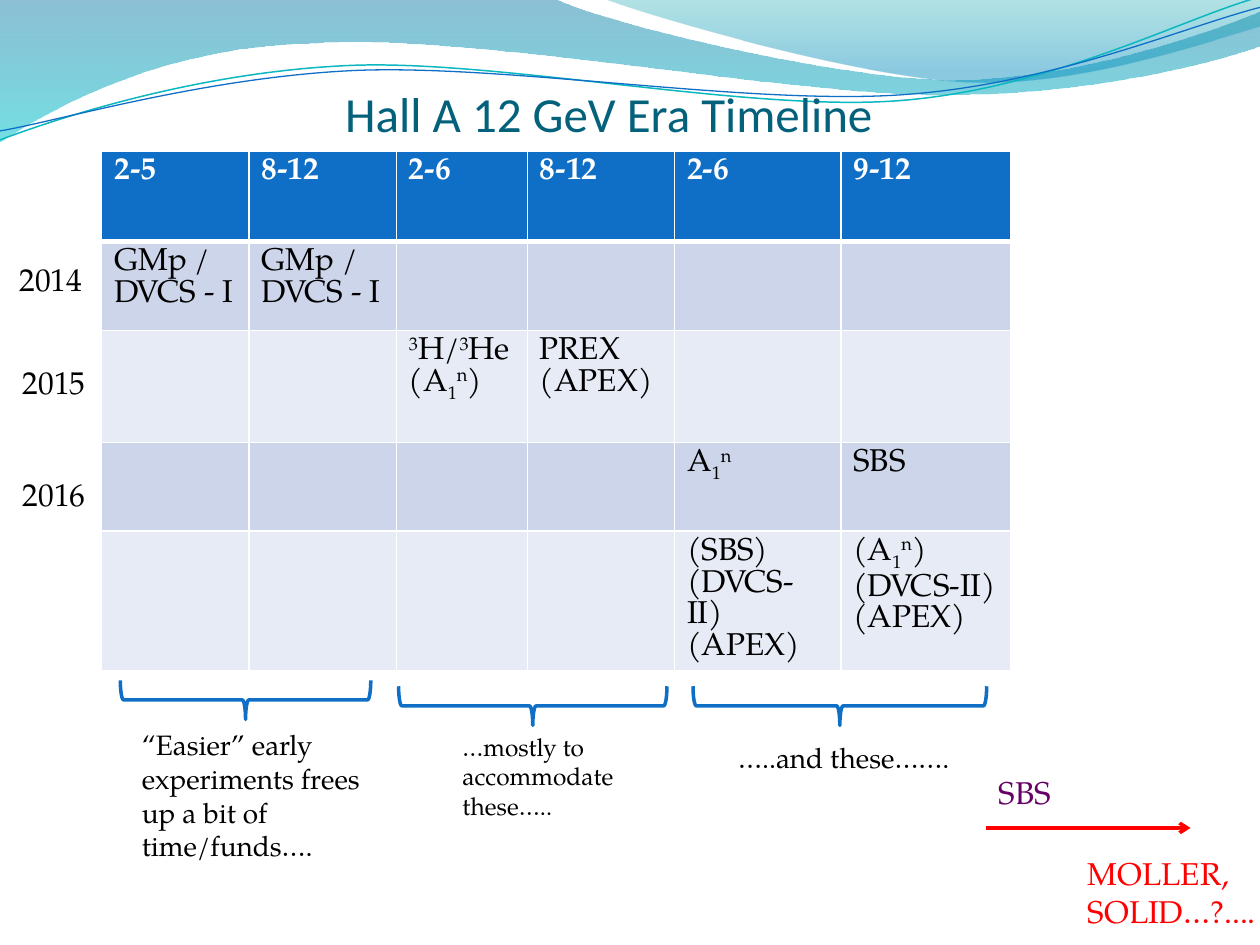
from dataclasses import dataclass
from itertools import product
from math import cos, radians, sin
from typing import Any, NamedTuple

from lxml.etree import SubElement
from pptx import Presentation
from pptx.dml.color import RGBColor as Rgb
from pptx.enum.shapes import MSO_CONNECTOR as Connector, MSO_SHAPE as Preset
from pptx.enum.text import MSO_ANCHOR as Anchor, PP_ALIGN as Align
from pptx.oxml.ns import qn
from pptx.util import Cm, Pt


@dataclass(frozen=True)
class Theme:
    heading_font: str = "Calibri"
    body_font: str = "TeX Gyre Pagella"
    heading_size: float = 28
    body_size: float = 18
    note_size: float = 16
    small_size: float = 14
    heading: str = "04617B"
    black: str = "000000"
    white: str = "FFFFFF"
    blue: str = "0F6FC6"
    teal: str = "0AB8BF"
    red: str = "FF0000"
    purple: str = "660066"
    bands: tuple = ("CCD5EA", "E7EBF5")


THEME = Theme()


class Piece(NamedTuple):
    text: str
    baseline: int = 0


class Stop(NamedTuple):
    position: float
    color: str
    opacity: int


class Label(NamedTuple):
    text: str
    box: tuple
    size: float = THEME.body_size
    color: str = THEME.black


class Brace(NamedTuple):
    center_x: float
    center_y: float
    span: float


@dataclass(frozen=True)
class Wave:
    start: tuple
    segments: tuple
    stops: tuple = ()
    line_color: str = ""
    line_width: float = 0
    tilt: float = 0
    pivot: tuple = (0, 0)


SUPER_3 = Piece("3", 30000)
A1N = (Piece("A"), Piece("1", -25000), Piece("n", 30000))
A1N_BRACKETED = (Piece("(A"), *A1N[1:], Piece(")"))
GMP, SBS, SBS_BRACKETED = (Piece("GMp / DVCS - I"),), (Piece("SBS"),), (Piece("(SBS)"),)
PREX, APEX, DVCS = (Piece("PREX"),), (Piece("(APEX)"),), (Piece("(DVCS-II)"),)
HELIUM = (SUPER_3, Piece("H/"), SUPER_3, Piece("He"))

MONTHS = ("2-5", "8-12", "2-6", "8-12", "2-6", "9-12")
EXPERIMENTS = {
    (1, 0): [GMP], (1, 1): [GMP],
    (2, 2): [HELIUM, A1N_BRACKETED], (2, 3): [PREX, APEX],
    (3, 4): [A1N], (3, 5): [SBS],
    (4, 4): [SBS_BRACKETED, DVCS, APEX], (4, 5): [A1N_BRACKETED, DVCS, APEX],
}
COLUMN_WIDTHS = (2.97, 2.97, 2.64, 2.97, 3.35, 3.43)
ROW_HEIGHTS = (1.83, 1.79, 2.26, 1.79, 2.79)

WAVES = (
    Wave((-0.01, 0), (
        ((11.18, -0.03),), ((12.09, 0.43), (16.87, 1.6), (19.25, 1.6)),
        ((21.67, 1.6), (24.33, 0.66), (25.4, 0.23)), ((25.43, 0.91),),
        ((24.97, 1.12), (22.1, 1.93), (18.95, 1.91)),
        ((15.8, 1.91), (9.7, 0.71), (6.53, 0.86)),
        ((3.28, 0.91), (1.17, 2.11), (-0.03, 2.87)),
    ), stops=(Stop(0, "0074A1", 45), Stop(1, "00C6CF", 55))),
    Wave((12.17, -0.03), (
        ((12.93, 0.28), (17.32, 1.57), (19.53, 1.65)),
        ((21.74, 1.75), (24.41, 0.81), (25.4, 0.53)), ((25.4, 0),),
    ), stops=(Stop(0, "00A1A9", 30), Stop(0.8, "008BBF", 45))),
    Wave((0, 2.82), (
        ((1.22, 2.36), (4.01, 1.45), (7.04, 1.32)),
        ((10.03, 1.19), (15.06, 2.26), (18.11, 2.03)),
        ((21.16, 1.8), (23.83, 0.38), (25.35, -0.05)),
    ), line_color=THEME.teal, line_width=0.85, tilt=-2.7, pivot=(12.67, 1.46)),
    Wave((0, 2.64), (
        ((1.19, 2.44), (4.17, 1.55), (7.19, 1.42)),
        ((10.24, 1.3), (15.16, 2.13), (18.21, 1.91)),
        ((21.23, 1.7), (23.9, 0.53), (25.4, 0.15)),
    ), line_color=THEME.blue, line_width=0.75, tilt=-2.7, pivot=(12.69, 1.5)),
)

BRACES = (Brace(4.95, 14.11, 5.05), Brace(10.74, 14.23, 5.41), Brace(16.93, 14.23, 5.92))
LABELS = (
    Label("“Easier” early experiments frees up a bit of time/funds….",
          (2.61, 14.55, 5.26, 3.76), THEME.note_size),
    Label("…mostly to accommodate these…..", (9.07, 14.63, 3.71, 2.06), THEME.small_size),
    Label("…..and these…….", (14.63, 14.81, 5.26, 1.7), THEME.note_size),
    Label("MOLLER, SOLID…?....", (21.68, 17.09, 4.06, 1.8), color=THEME.red),
    Label("2014", (0.14, 5.11, 2.03, 1.02)),
    Label("2015", (0.21, 7.19, 2.03, 1.02)),
    Label("2016", (0.21, 9.45, 2.03, 1.02)),
    Label("SBS", (19.88, 15.46, 1.8, 1.02), color=THEME.purple),
)


def apply(target: Any, **values: Any) -> None:
    for attribute, value in values.items():
        setattr(target, attribute, value)


def style_font(font: Any, size: float, color: str, name: str = THEME.body_font,
               bold: bool = False) -> None:
    apply(font, size=Pt(size), name=name, bold=bold)
    font.color.rgb = Rgb.from_string(color)


def style_line(line: Any, color: str, width: float) -> None:
    line.color.rgb = Rgb.from_string(color)
    line.width = Pt(width)


def level(point: tuple, wave: Wave) -> tuple:
    angle = radians(-wave.tilt)
    dx, dy = point[0] - wave.pivot[0], point[1] - wave.pivot[1]
    return (Cm(wave.pivot[0] + dx * cos(angle) - dy * sin(angle)),
            Cm(wave.pivot[1] + dx * sin(angle) + dy * cos(angle)))


def bend(ribbon: Any, segments: tuple) -> None:
    steps = iter(list(ribbon._element.spPr.iter(qn("a:lnTo"))))
    for segment in segments:
        first, *others = [next(steps) for _ in segment]
        if others:
            first.tag = qn("a:cubicBezTo")
        for step in others:
            first.append(step[0])
            step.getparent().remove(step)


def draw_wave(shapes: Any, wave: Wave) -> None:
    builder = shapes.build_freeform(*level(wave.start, wave))
    corners = [level(point, wave) for segment in wave.segments for point in segment]
    builder.add_line_segments(corners, close=bool(wave.stops))
    ribbon = builder.convert_to_shape()
    bend(ribbon, wave.segments)
    ribbon.rotation = wave.tilt
    ribbon.shadow.inherit = False
    if not wave.stops:
        ribbon.fill.background()
        style_line(ribbon.line, wave.line_color, wave.line_width)
        return
    ribbon.line.fill.background()
    ribbon.fill.gradient()
    ribbon.fill.gradient_angle = 270
    for target, stop in zip(ribbon.fill.gradient_stops, wave.stops):
        target.position = stop.position
        target.color.rgb = Rgb.from_string(stop.color)
    for color, stop in zip(ribbon._element.spPr.iter(qn("a:srgbClr")), wave.stops):
        SubElement(color, qn("a:alpha"), val=str(stop.opacity * 1000))


def draw_title(title: Any) -> None:
    title._element.getparent().append(title._element)
    apply(title, left=Cm(-0.43), top=Cm(-0.3), width=Cm(25.4), height=Cm(3.18))
    frame = title.text_frame
    apply(frame, text="Hall A 12 GeV Era Timeline", vertical_anchor=Anchor.BOTTOM,
          margin_left=0, margin_right=0, margin_bottom=0)
    frame.paragraphs[0].alignment = Align.CENTER
    style_font(frame.paragraphs[0].runs[0].font, THEME.heading_size, THEME.heading,
               THEME.heading_font)


def fill_cell(cell: Any, paragraphs: list, header: bool, fill: str) -> None:
    properties = cell._tc.get_or_add_tcPr()
    for side in "LRTB":
        width = Pt(3 if header and side == "B" else 1)
        border = SubElement(properties, qn(f"a:ln{side}"), w=str(width))
        SubElement(SubElement(border, qn("a:solidFill")), qn("a:srgbClr"), val=THEME.white)
    cell.fill.solid()
    cell.fill.fore_color.rgb = Rgb.from_string(fill)
    frame = cell.text_frame
    for index, pieces in enumerate(paragraphs):
        paragraph = frame.add_paragraph() if index else frame.paragraphs[0]
        for piece in pieces:
            run = paragraph.add_run()
            run.text = piece.text
            style_font(run.font, THEME.body_size, THEME.white if header else THEME.black,
                       bold=header)
            if piece.baseline:
                run.font._element.set("baseline", str(piece.baseline))


def draw_timeline(shapes: Any) -> None:
    rows, columns = len(ROW_HEIGHTS), len(COLUMN_WIDTHS)
    table = shapes.add_table(rows, columns, Cm(2.05), Cm(3.04), Cm(sum(COLUMN_WIDTHS)),
                             Cm(sum(ROW_HEIGHTS))).table
    for column, width in zip(table.columns, COLUMN_WIDTHS):
        column.width = Cm(width)
    for row, height in zip(table.rows, ROW_HEIGHTS):
        row.height = Cm(height)
    for row, column in product(range(rows), range(columns)):
        header = row == 0
        content = [(Piece(MONTHS[column]),)] if header else EXPERIMENTS.get((row, column), [])
        fill = THEME.blue if header else THEME.bands[(row - 1) % 2]
        fill_cell(table.cell(row, column), content, header, fill)


def draw_brace(shapes: Any, brace: Brace, depth: float = 0.79) -> None:
    shape = shapes.add_shape(Preset.RIGHT_BRACE, Cm(brace.center_x - depth / 2),
                             Cm(brace.center_y - brace.span / 2), Cm(depth), Cm(brace.span))
    shape.rotation = 90
    shape.fill.background()
    style_line(shape.line, THEME.blue, 2)
    shape.shadow.inherit = False


def draw_label(shapes: Any, label: Label) -> None:
    frame = shapes.add_textbox(*map(Cm, label.box)).text_frame
    apply(frame, word_wrap=True, text=label.text)
    style_font(frame.paragraphs[0].runs[0].font, label.size, label.color)


def draw_future_arrow(shapes: Any) -> None:
    arrow = shapes.add_connector(Connector.STRAIGHT, Cm(19.88), Cm(16.69), Cm(24), Cm(16.69))
    style_line(arrow.line, THEME.red, 2)
    properties = arrow._element.spPr
    SubElement(properties.find(qn("a:ln")), qn("a:tailEnd"), type="arrow")
    SubElement(properties, qn("a:effectLst"))


def main() -> None:
    deck = Presentation()
    apply(deck, slide_width=Cm(25.4), slide_height=Cm(19.05))
    slide = deck.slides.add_slide(deck.slide_layouts[5])
    shapes = slide.shapes
    for wave in WAVES:
        draw_wave(shapes, wave)
    draw_title(shapes.title)
    draw_timeline(shapes)
    for brace in BRACES:
        draw_brace(shapes, brace)
    for label in LABELS:
        draw_label(shapes, label)
    draw_future_arrow(shapes)
    deck.save("out.pptx")


if __name__ == "__main__":
    main()
